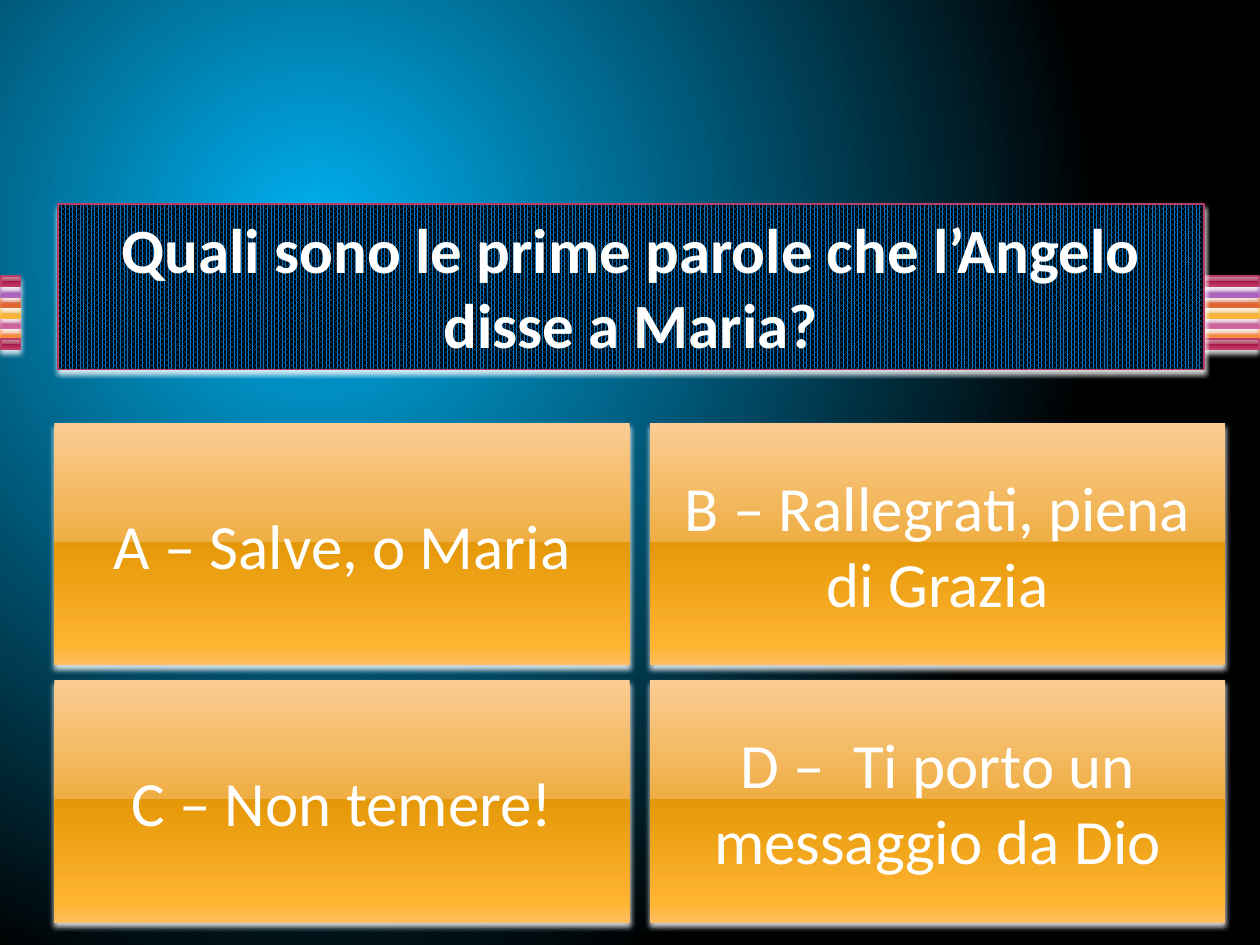
from dataclasses import dataclass

from lxml import etree
from pptx import Presentation
from pptx.dml.color import RGBColor
from pptx.enum.dml import MSO_PATTERN
from pptx.enum.shapes import MSO_SHAPE
from pptx.enum.text import MSO_ANCHOR, MSO_AUTO_SIZE, PP_ALIGN
from pptx.oxml.ns import qn
from pptx.util import Pt

RECTANGLE = MSO_SHAPE.RECTANGLE
DENSE_DOTS = MSO_PATTERN.PERCENT_80
CENTER = PP_ALIGN.CENTER
TOP, MIDDLE = MSO_ANCHOR.TOP, MSO_ANCHOR.MIDDLE
FIT_SHAPE = MSO_AUTO_SIZE.SHAPE_TO_FIT_TEXT


@dataclass(frozen=True)
class Gloss:
    colors: tuple
    line: str


@dataclass(frozen=True)
class Theme:
    font: str = "Calibri"
    size: float = 36
    line_width: float = 0.9
    text: str = "FFFFFF"
    shadow: str = "FFFFFF"
    glow: str = "00B0F0"
    dark: str = "000000"
    banner: str = "0070C0"
    red: Gloss = Gloss(("CE94A2", "B34869", "A61749", "C13764", "CA5D7C"), "B83D68")
    purple: Gloss = Gloss(("C6A2D0", "A666B4", "8F3EA1", "AD5DBF", "BA76CA"), "AC66BB")
    rust: Gloss = Gloss(("E7A493", "D66B42", "CC4809", "E9642C", "F07B55"), "DE6C36")
    amber: Gloss = Gloss(("FBCC93", "EFAE43", "E59807", "FFB432", "FFBE5F"), "F9B639")
    pink: Gloss = Gloss(("DDA4C1", "C66B9D", "B34181", "D361A0", "DC79AE"), "CF6DA4")
    orange: Gloss = Gloss(("FBB494", "F08745", "E5670B", "FF8736", "FF9961"), "FA8D3D")


THEME = Theme()
GLOSS_STOPS = (0, 49, 49, 92, 100)
STRIPES = (THEME.red, THEME.purple, THEME.rust, THEME.amber,
           THEME.pink, THEME.orange, THEME.red)
QUESTION = "Quali sono le prime parole che l’Angelo disse a Maria?"
ANSWERS = ("A – Salve, o Maria", "B – Rallegrati, piena di Grazia",
           "C – Non temere!", "D –  Ti porto un messaggio da Dio")


def add_node(parent, tag, **attributes):
    values = {name: str(value) for name, value in attributes.items()}
    return etree.SubElement(parent, qn(tag), values)


def set_gradient(fill, owner, stops):
    fill.gradient()
    gradient = owner.find(".//" + qn("a:gradFill"))
    for child in list(gradient):
        gradient.remove(child)
    stop_list = add_node(gradient, "a:gsLst")
    for position, color in stops:
        stop = add_node(stop_list, "a:gs", pos=position * 1000)
        add_node(stop, "a:srgbClr", val=color)
    return gradient


def set_gloss(shape, gloss):
    stops = zip(GLOSS_STOPS, gloss.colors)
    gradient = set_gradient(shape.fill, shape.element, stops)
    add_node(gradient, "a:lin", ang=90 * 60000, scaled=0)


def set_line(shape, color):
    shape.line.color.rgb = RGBColor.from_string(color)
    shape.line.width = Pt(THEME.line_width)


def add_box(slide, box):
    shape = slide.shapes.add_shape(RECTANGLE, *map(Pt, box))
    shape.shadow.inherit = False
    effects = shape.element.spPr.find(qn("a:effectLst"))
    shadow = add_node(effects, "a:outerShdw", blurRad=Pt(3.1), dist=Pt(2),
                      dir=90 * 60000, rotWithShape=0)
    color = add_node(shadow, "a:srgbClr", val=THEME.shadow)
    add_node(color, "a:alpha", val=83000)
    return shape


def write_text(shape, text, *, bold=False, anchor=MIDDLE):
    frame = shape.text_frame
    frame.word_wrap = True
    frame.vertical_anchor = anchor
    paragraph = frame.paragraphs[0]
    paragraph.alignment = CENTER
    run = paragraph.add_run()
    run.text = text
    run.font.name = THEME.font
    run.font.size = Pt(THEME.size)
    run.font.bold = bold
    run.font.color.rgb = RGBColor.from_string(THEME.text)


def paint_background(slide):
    stops = ((0, THEME.glow), (100, THEME.dark))
    gradient = set_gradient(slide.background.fill, slide.element, stops)
    circle = add_node(gradient, "a:path", path="circle")
    add_node(circle, "a:fillToRect", l=50000, t=50000, r=100000, b=100000)


def add_ribbon(slide, box):
    left, top, width, height = box
    step = height / len(STRIPES)
    last = len(STRIPES) - 1
    for index in (*reversed(range(last)), last):
        stripe = add_box(slide, (left, top + index * step, width, step))
        set_gloss(stripe, STRIPES[index])
        set_line(stripe, STRIPES[index].line)


def add_answers(slide, box, columns=2, column_gap=11.5, row_gap=8.6):
    left, top, width, height = box
    rows = len(ANSWERS) // columns
    tile_width = (width - column_gap * (columns - 1)) / columns
    tile_height = (height - row_gap * (rows - 1)) / rows
    for index, answer in enumerate(ANSWERS):
        row, column = divmod(index, columns)
        tile = add_box(slide, (left + column * (tile_width + column_gap),
                               top + row * (tile_height + row_gap),
                               tile_width, tile_height))
        set_gloss(tile, THEME.amber)
        tile.line.fill.background()
        write_text(tile, answer)


def add_question(slide, box):
    banner = add_box(slide, box)
    banner.fill.patterned()
    banner.fill.pattern = DENSE_DOTS
    banner.fill.fore_color.rgb = RGBColor.from_string(THEME.banner)
    banner.fill.back_color.rgb = RGBColor.from_string(THEME.dark)
    set_line(banner, THEME.line_color if hasattr(THEME, "line_color") else THEME.red.line)
    write_text(banner, QUESTION, bold=True, anchor=TOP)
    banner.text_frame.auto_size = FIT_SHAPE


def main():
    presentation = Presentation()
    presentation.slide_width, presentation.slide_height = Pt(720), Pt(540)
    slide = presentation.slides.add_slide(presentation.slide_layouts[6])
    paint_background(slide)
    add_ribbon(slide, (0.7, 157.7, 11, 42))
    add_ribbon(slide, (676, 157.7, 43.3, 42))
    add_answers(slide, (31, 241.9, 669.2, 285.2))
    add_question(slide, (33.1, 116.6, 654.8, 94.5))
    presentation.save("out.pptx")


if __name__ == "__main__":
    main()
